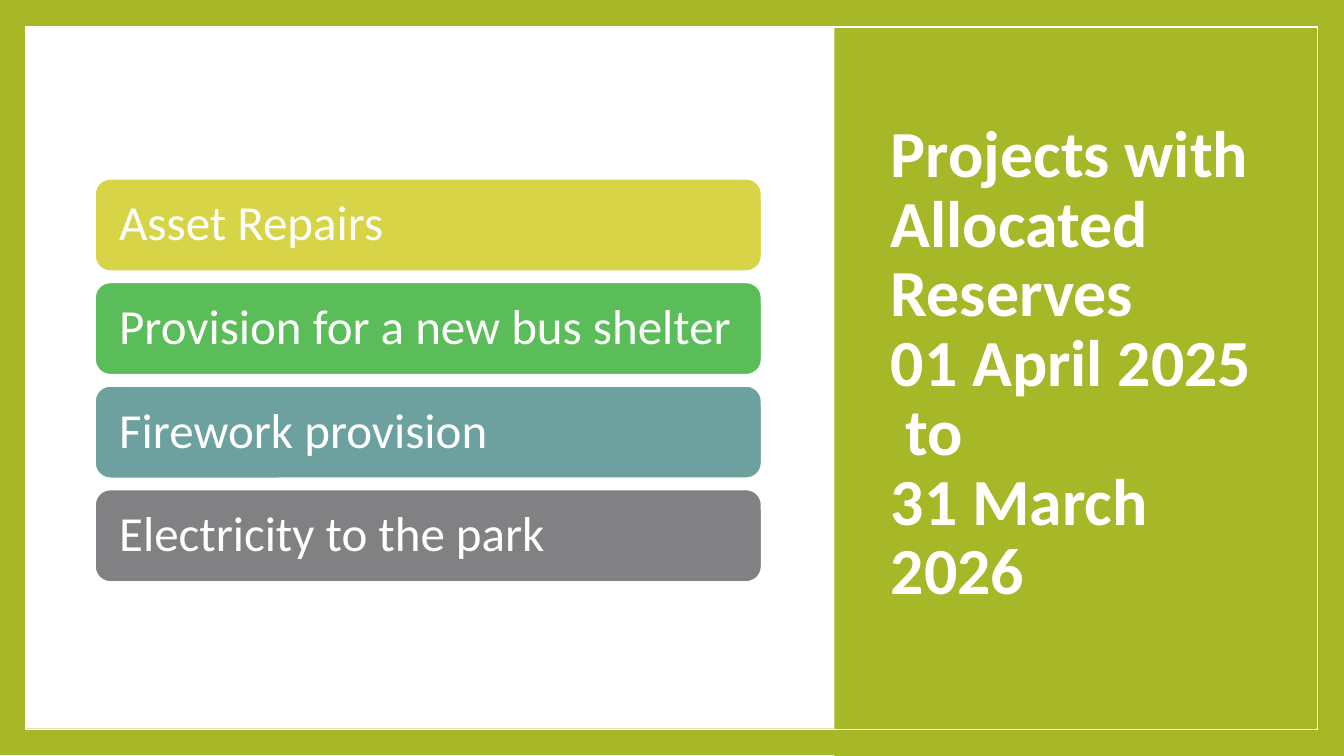
from dataclasses import dataclass

from pptx import Presentation
from pptx.dml.color import RGBColor
from pptx.enum.shapes import MSO_SHAPE
from pptx.enum.text import MSO_ANCHOR, PP_ALIGN
from pptx.util import Cm, Pt

RECTANGLE = MSO_SHAPE.RECTANGLE
ROUNDED = MSO_SHAPE.ROUNDED_RECTANGLE
MIDDLE = MSO_ANCHOR.MIDDLE
LEFT = PP_ALIGN.LEFT


@dataclass(frozen=True)
class Theme:
    """Colours, font and type sizes of the slide."""
    font: str = "Calibri"
    lime: str = "A6B727"
    white: str = "FFFFFF"
    bars: tuple = ("D7D447", "5ABD59", "6CA1A0", "818183")
    title_size: int = 47
    bar_size: int = 35


def write_text(frame, lines, *, font, size, color, bold=False, spacing=0.9,
               inset_x=0.25, inset_y=0.13):
    """Write lines into one paragraph, separated by line breaks."""
    frame.word_wrap = True
    frame.vertical_anchor = MIDDLE
    frame.margin_left = frame.margin_right = Cm(inset_x)
    frame.margin_top = frame.margin_bottom = Cm(inset_y)
    para = frame.paragraphs[0]
    para.alignment = LEFT
    para.line_spacing = spacing
    for index, line in enumerate(lines):
        if index:
            para.add_line_break()
        span = para.add_run()
        span.text = line
        span.font.name = font
        span.font.size = Pt(size)
        span.font.bold = bold
        span.font.color.rgb = RGBColor.from_string(color)


class SlideBuilder:
    """Adds styled elements to the current slide."""

    def __init__(self, page, theme):
        self.page = page
        self.theme = theme

    def panel(self, left, top, width, height, fill=None, line=None,
              line_width=1, kind=RECTANGLE):
        """Add a flat shape with an optional fill and outline."""
        shape = self.page.shapes.add_shape(
            kind, Cm(left), Cm(top), Cm(width), Cm(height))
        shape.shadow.inherit = False
        if fill:
            shape.fill.solid()
            shape.fill.fore_color.rgb = RGBColor.from_string(fill)
        else:
            shape.fill.background()
        if line:
            shape.line.color.rgb = RGBColor.from_string(line)
            shape.line.width = Pt(line_width)
        else:
            shape.line.fill.background()
        return shape

    def title(self, lines, left, top, width, height):
        """Add the bold title text."""
        box = self.page.shapes.add_textbox(
            Cm(left), Cm(top), Cm(width), Cm(height))
        write_text(box.text_frame, lines, font=self.theme.font,
                   size=self.theme.title_size, color=self.theme.white,
                   bold=True, spacing=0.88)

    def project_bar(self, label, fill, top):
        """Add one rounded bar that names a project."""
        bar = self.panel(2.39, top, 16.81, 2.34, fill, self.theme.white,
                         1.5, ROUNDED)
        write_text(bar.text_frame, [label], font=self.theme.font,
                   size=self.theme.bar_size, color=self.theme.white,
                   inset_x=0.5)


def main():
    """Build the slide and save the deck."""
    deck = Presentation()
    deck.slide_width, deck.slide_height = Cm(33.87), Cm(19.05)
    theme = Theme()
    slide = SlideBuilder(deck.slides.add_slide(deck.slide_layouts[6]), theme)

    slide.panel(0, -0.02, 33.87, 19.05, theme.lime)
    slide.panel(0.64, 0.66, 32.56, 17.7, theme.white)
    slide.panel(21.03, 0, 12.84, 19.05, theme.lime)
    slide.title(["Projects with Allocated Reserves ", "01 April 2025", " to ",
                 "31 March 2026"], 22.2, 1.7, 9.93, 15.01)
    slide.panel(0.64, 0.68, 32.56, 17.7, line=theme.white)

    projects = ("Asset Repairs", "Provision for a new bus shelter",
                "Firework provision", "Electricity to the park")
    for row, (label, fill) in enumerate(zip(projects, theme.bars)):
        slide.project_bar(label, fill, 4.5 + row * 2.61)

    deck.save("out.pptx")


if __name__ == "__main__":
    main()
